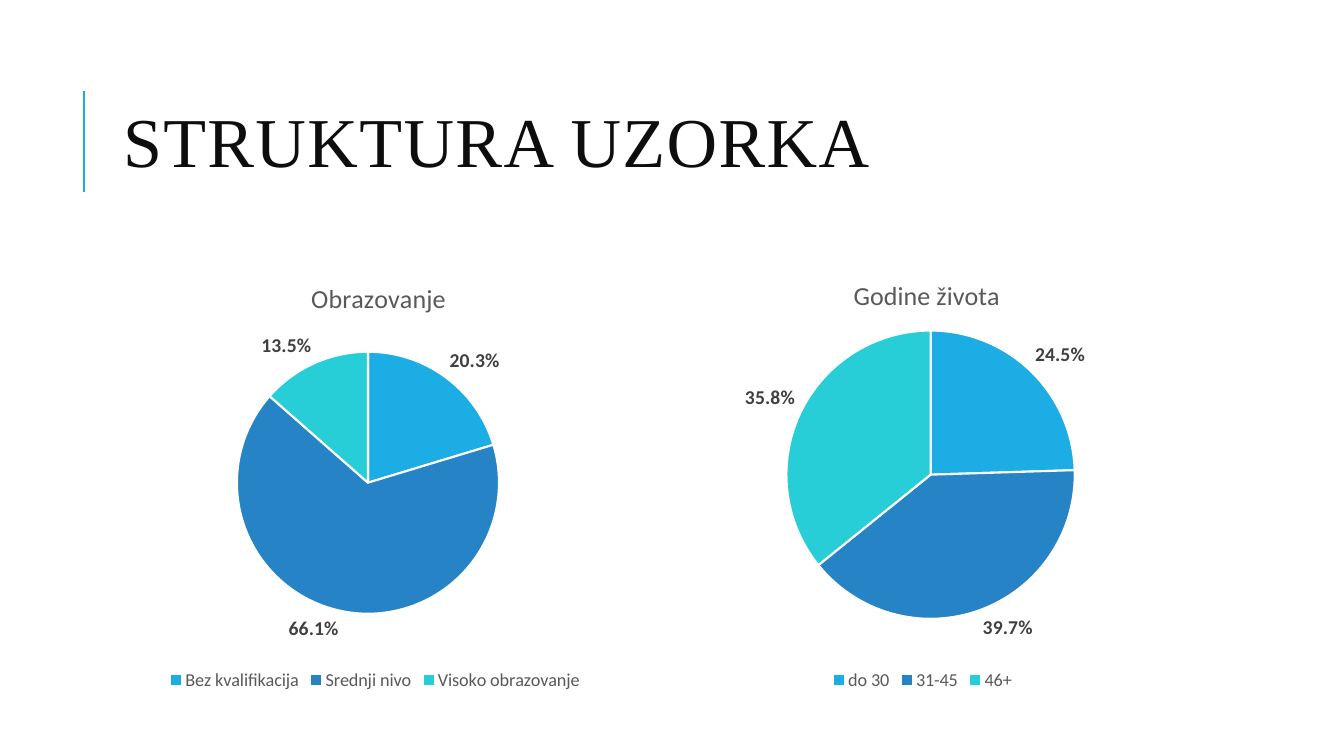
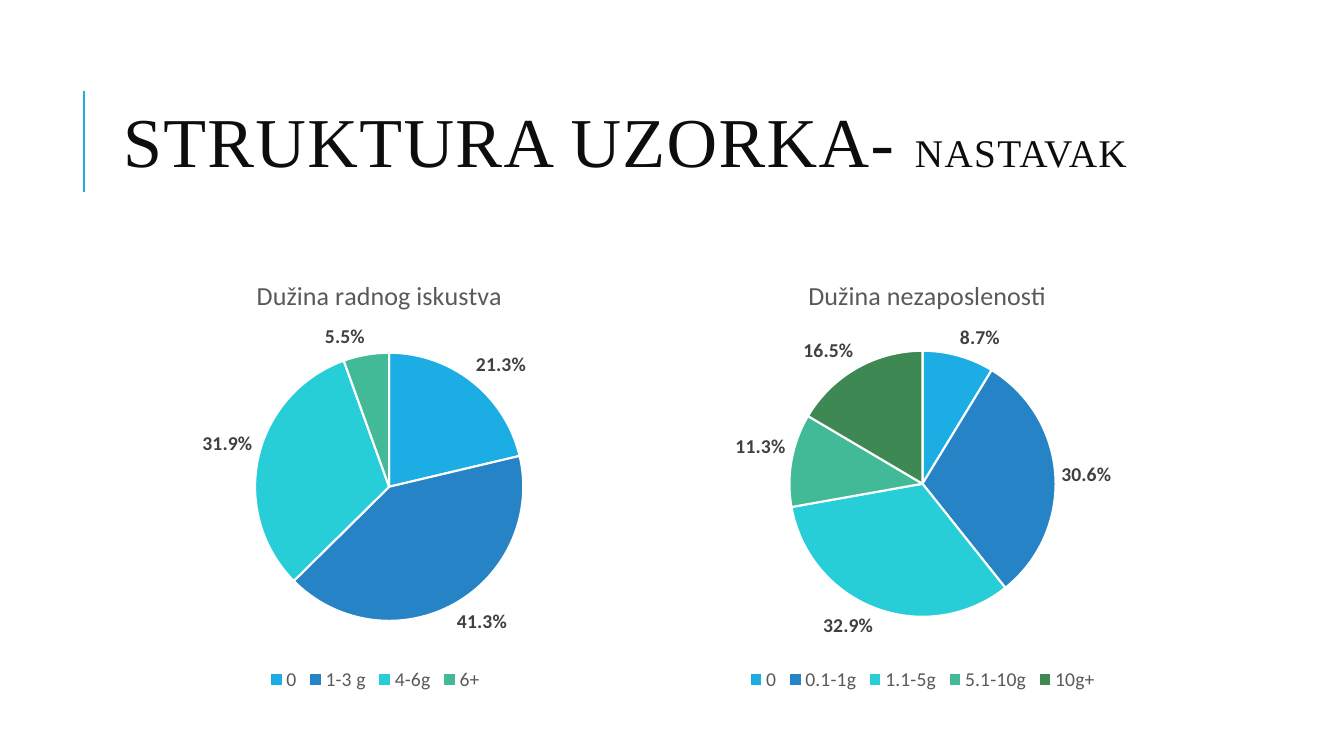
from pptx import Presentation
from pptx.chart.data import CategoryChartData
from pptx.dml.color import RGBColor
from pptx.enum.chart import XL_CHART_TYPE, XL_LABEL_POSITION, XL_LEGEND_POSITION
from pptx.enum.shapes import MSO_CONNECTOR
from pptx.enum.text import MSO_ANCHOR, MSO_AUTO_SIZE, PP_ALIGN
from pptx.oxml.ns import qn
from pptx.util import Inches, Pt
from lxml.etree import SubElement

BLUE = RGBColor(0x1C, 0xAD, 0xE4)
SLICES = [BLUE, RGBColor(0x26, 0x83, 0xC6), RGBColor(0x27, 0xCE, 0xD7),
          RGBColor(0x42, 0xBA, 0x97), RGBColor(0x3E, 0x88, 0x53)]
WHITE = RGBColor(0xFF, 0xFF, 0xFF)
INK = RGBColor(0x0D, 0x0D, 0x0D)
GRAY = RGBColor(0x59, 0x59, 0x59)
DARK = RGBColor(0x40, 0x40, 0x40)

# Chart frames, in inches
LEFTS, TOP, WIDE, HIGH = (1.12, 6.55), 2.5, 5.2, 4.4

# Title runs, legend size, then per chart:
# heading, heading corner, pie centre, pie radius, categories, values
SLIDES = [
    ([("STRUKTURA UZORKA", 50)], 13, [
        ("Obrazovanje", (3.04, 2.73), (3.65, 4.79), 1.3,
         ["Bez kvalifikacija", "Srednji nivo", "Visoko obrazovanje"],
         [0.203, 0.661, 0.135]),
        ("Godine života", (8.42, 2.7), (9.23, 4.71), 1.43,
         ["do 30", "31-45", "46+"],
         [0.245, 0.397, 0.358]),
    ]),
    ([("STRUKTURA UZORKA- ", 50), ("NASTAVAK", 28)], 14, [
        ("Dužina radnog iskustva", (2.5, 2.7), (3.86, 4.83), 1.33,
         ["0", "1-3 g", "4-6g", "6+"],
         [0.213, 0.413, 0.319, 0.055]),
        ("Dužina nezaposlenosti", (7.97, 2.7), (9.15, 4.8), 1.32,
         ["0", "0.1-1g", "1.1-5g", "5.1-10g", "10g+"],
         [0.087, 0.306, 0.329, 0.113, 0.165]),
    ]),
]


def style(font, size, color, name="Calibri", bold=False):
    font.size, font.name, font.bold = Pt(size), name, bold
    font.color.rgb = color


def place(node, **marks):
    """Give a chart part a manual layout, as fractions of the chart frame."""
    layout = node.find(qn("c:layout"))
    if layout is None:
        layout = SubElement(node, qn("c:layout"))
        node.insert(0, layout)
    manual = SubElement(layout, qn("c:manualLayout"))
    for tag, val in marks.items():
        SubElement(manual, qn("c:" + tag)).set("val", str(val))


prs = Presentation()
prs.slide_width, prs.slide_height = Inches(13.33), Inches(7.5)

for runs, size, pies in SLIDES:
    slide = prs.slides.add_slide(prs.slide_layouts[5])

    rule = slide.shapes.add_connector(
        MSO_CONNECTOR.STRAIGHT, Inches(0.83), Inches(1.9), Inches(0.83), Inches(0.9))
    rule.line.color.rgb, rule.line.width = BLUE, Pt(1.5)
    SubElement(rule._element.spPr, qn("a:effectLst"))

    title = slide.shapes.title
    title.left, title.top = Inches(1.12), Inches(0.64)
    title.width, title.height = Inches(10.63), Inches(1.64)
    frame = title.text_frame
    frame.word_wrap, frame.auto_size = True, MSO_AUTO_SIZE.NONE
    frame.vertical_anchor = MSO_ANCHOR.MIDDLE
    para = frame.paragraphs[0]
    para.alignment, para.line_spacing = PP_ALIGN.LEFT, 0.8
    for text, points in runs:
        run = para.add_run()
        run.text = text
        style(run.font, points, INK, "Times New Roman")
        run.font._element.set("spc", "100")

    for left, (head, corner, centre, radius, cats, vals) in zip(LEFTS, pies):
        data = CategoryChartData(number_format="0.0%")
        data.categories = cats
        data.add_series("Series 1", vals)
        chart = slide.shapes.add_chart(
            XL_CHART_TYPE.PIE, Inches(left), Inches(TOP), Inches(WIDE), Inches(HIGH),
            data).chart
        style(chart.font, 10, GRAY)

        chart.has_title = True
        run = chart.chart_title.text_frame.paragraphs[0].add_run()
        run.text = head
        style(run.font, 18.6, GRAY)
        place(chart.chart_title._element, xMode="edge", yMode="edge",
              x=(corner[0] - left) / WIDE, y=(corner[1] - TOP) / HIGH)

        chart.has_legend = True
        chart.legend.position = XL_LEGEND_POSITION.BOTTOM
        chart.legend.include_in_layout = False
        style(chart.legend.font, size, GRAY)

        plot = chart.plots[0]
        plot.vary_by_categories = True
        place(plot._element.getparent(), layoutTarget="inner",
              xMode="edge", yMode="edge",
              x=(centre[0] - radius - left) / WIDE,
              y=(centre[1] - radius - TOP) / HIGH,
              w=2 * radius / WIDE, h=2 * radius / HIGH)
        for i, color in enumerate(SLICES[:len(vals)]):
            part = plot.series[0].points[i].format
            part.fill.solid()
            part.fill.fore_color.rgb = color
            part.line.color.rgb, part.line.width = WHITE, Pt(1.5)

        plot.has_data_labels = True
        labels = plot.data_labels
        labels.show_value, labels.show_percentage = True, False
        labels.number_format, labels.number_format_is_linked = "0.0%", False
        labels.position = XL_LABEL_POSITION.OUTSIDE_END
        style(labels.font, 14, DARK, bold=True)

prs.save("out.pptx")
